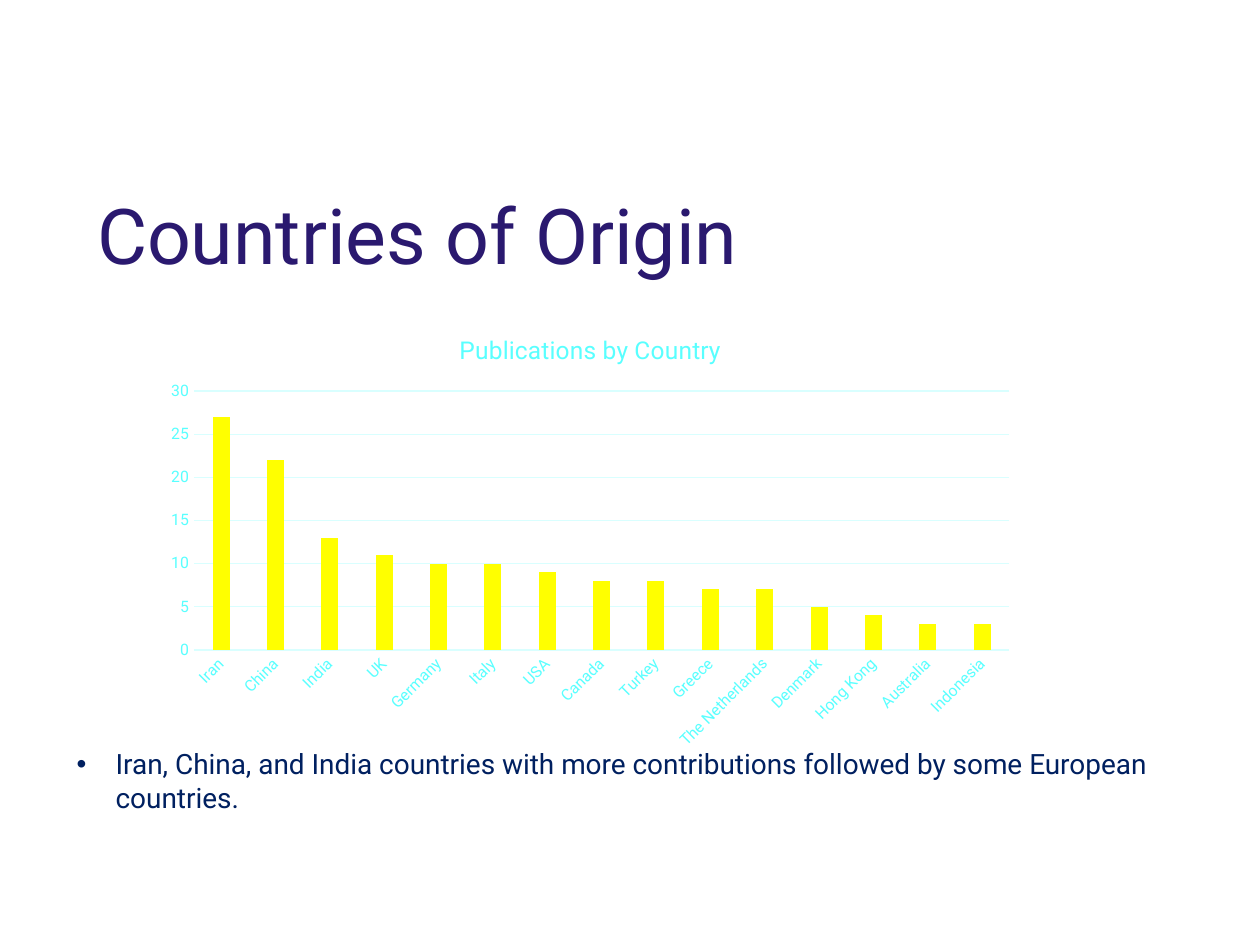
from pptx import Presentation
from pptx.chart.data import CategoryChartData
from pptx.dml.color import RGBColor
from pptx.enum import chart as ch, text as tx
from pptx.oxml import parse_xml
from pptx.oxml.ns import nsdecls
from pptx.util import Inches, Pt

FONT = "Roboto"
PURPLE = RGBColor(0x2A, 0x19, 0x6F)
NAVY = RGBColor(0x00, 0x20, 0x60)
CYAN = RGBColor(0x59, 0xFF, 0xFF)
PALE = RGBColor(0xD9, 0xFF, 0xFF)
YELLOW = RGBColor(0xFF, 0xFF, 0x00)

COUNTS = {
    "Iran": 27, "China": 22, "India": 13, "UK": 11, "Germany": 10,
    "Italy": 10, "USA": 9, "Canada": 8, "Turkey": 8, "Greece": 7,
    "The Netherlands": 7, "Denmark": 5, "Hong Kong": 4, "Australia": 3,
    "Indonesia": 3,
}


def style(font, size, color):
    font.name = FONT
    font.size = Pt(size)
    font.bold = False
    font.color.rgb = color


def add_run(para, words, size, color):
    run = para.add_run()
    run.text = words
    style(run.font, size, color)


def rule(line):
    line.color.rgb = PALE
    line.width = Pt(0.75)


def set_title(slide, words):
    title = slide.shapes.title
    title.left, title.top = Inches(0.67), Inches(1.5)
    title.width, title.height = Inches(9), Inches(0.83)
    frame = title.text_frame
    frame.auto_size = tx.MSO_AUTO_SIZE.NONE
    frame.vertical_anchor = tx.MSO_ANCHOR.MIDDLE
    para = frame.paragraphs[0]
    para.alignment = tx.PP_ALIGN.LEFT
    para.line_spacing = 0.83
    add_run(para, words, 44, PURPLE)


def add_columns(slide, heading, counts):
    data = CategoryChartData()
    data.categories = list(counts)
    data.add_series("Series 1", list(counts.values()))
    chart = slide.shapes.add_chart(
        ch.XL_CHART_TYPE.COLUMN_CLUSTERED, Inches(1.22), Inches(2.48),
        Inches(6.93), Inches(3.54), data).chart
    style(chart.font, 10, CYAN)
    chart.has_legend = False
    chart.has_title = True
    add_run(chart.chart_title.text_frame.paragraphs[0], heading, 14, CYAN)
    chart.chart_title.include_in_layout = False

    plot = chart.plots[0]
    plot.gap_width, plot.overlap = 219, -27
    plot.vary_by_categories = False
    fill = plot.series[0].format.fill
    fill.solid()
    fill.fore_color.rgb = YELLOW

    cat, val = chart.category_axis, chart.value_axis
    for axis in (cat, val):
        axis.major_tick_mark = axis.minor_tick_mark = ch.XL_TICK_MARK.NONE
        style(axis.tick_labels.font, 9, CYAN)
    rule(cat.format.line)
    cat._element.txPr.bodyPr.set("rot", "-2700000")
    val.format.line.fill.background()
    val.minimum_scale, val.maximum_scale, val.major_unit = 0, 30, 5
    rule(val.major_gridlines.format.line)


def add_bullet(slide, words):
    box = slide.shapes.add_textbox(
        Inches(0.51), Inches(5.6), Inches(8.9), Inches(0.91))
    frame = box.text_frame
    frame.word_wrap = True
    frame.vertical_anchor = tx.MSO_ANCHOR.BOTTOM
    para = frame.paragraphs[0]
    props = para._p.get_or_add_pPr()
    props.set("marL", str(Inches(0.31)))
    props.set("indent", str(-Inches(0.31)))
    for tag in ('buFont typeface="Arial"', 'buChar char="•"'):
        name, attr = tag.split(" ", 1)
        props.append(parse_xml(f'<a:{name} {nsdecls("a")} {attr}/>'))
    add_run(para, words, 16, NAVY)


def main():
    deck = Presentation()
    deck.slide_width, deck.slide_height = Inches(10), Inches(7.5)
    slide = deck.slides.add_slide(deck.slide_layouts[5])
    add_columns(slide, "Publications by Country", COUNTS)
    add_bullet(slide, "Iran, China, and India countries with more contributions "
                      "followed by some European countries.")
    set_title(slide, "Countries of Origin")
    deck.save("out.pptx")


if __name__ == "__main__":
    main()
